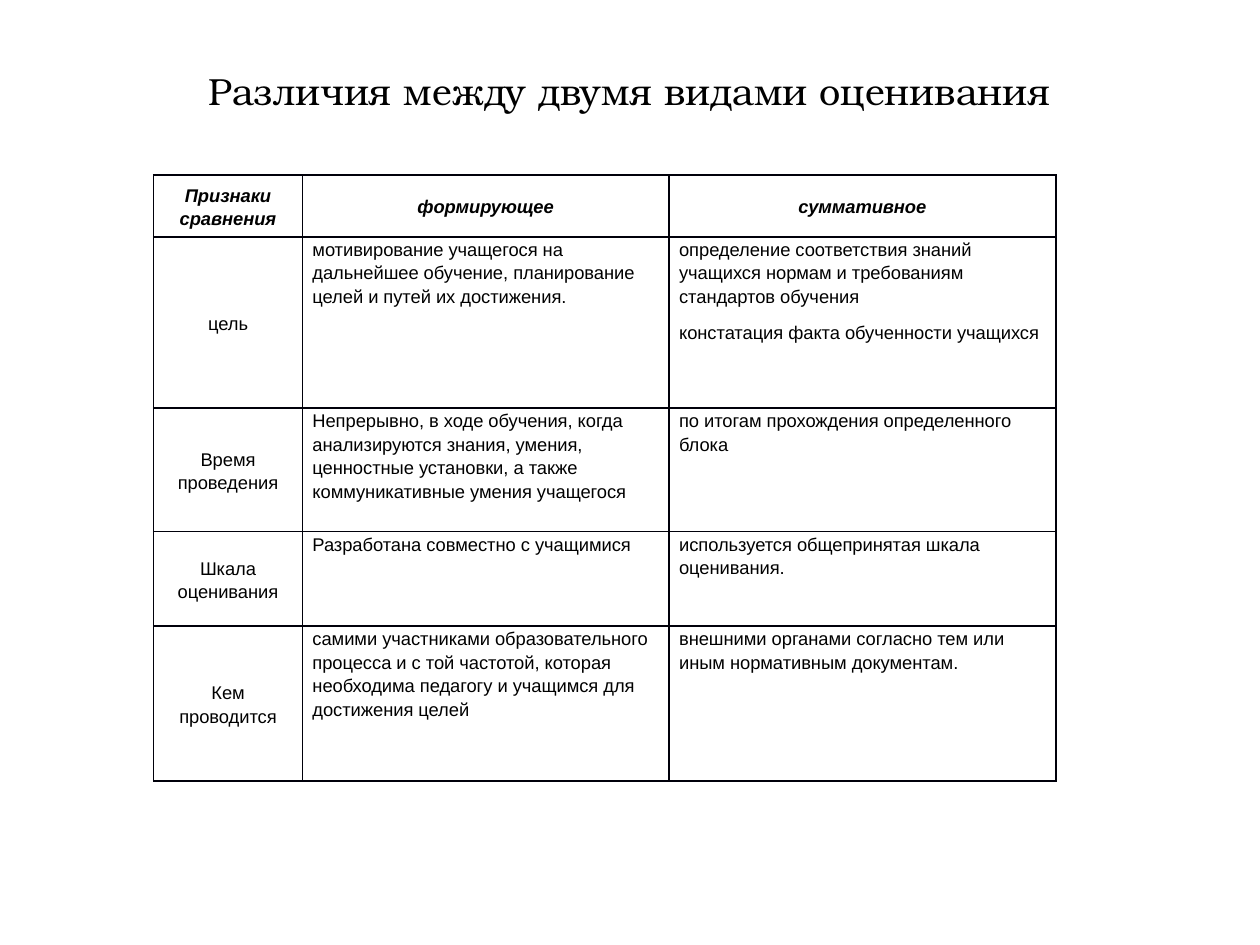
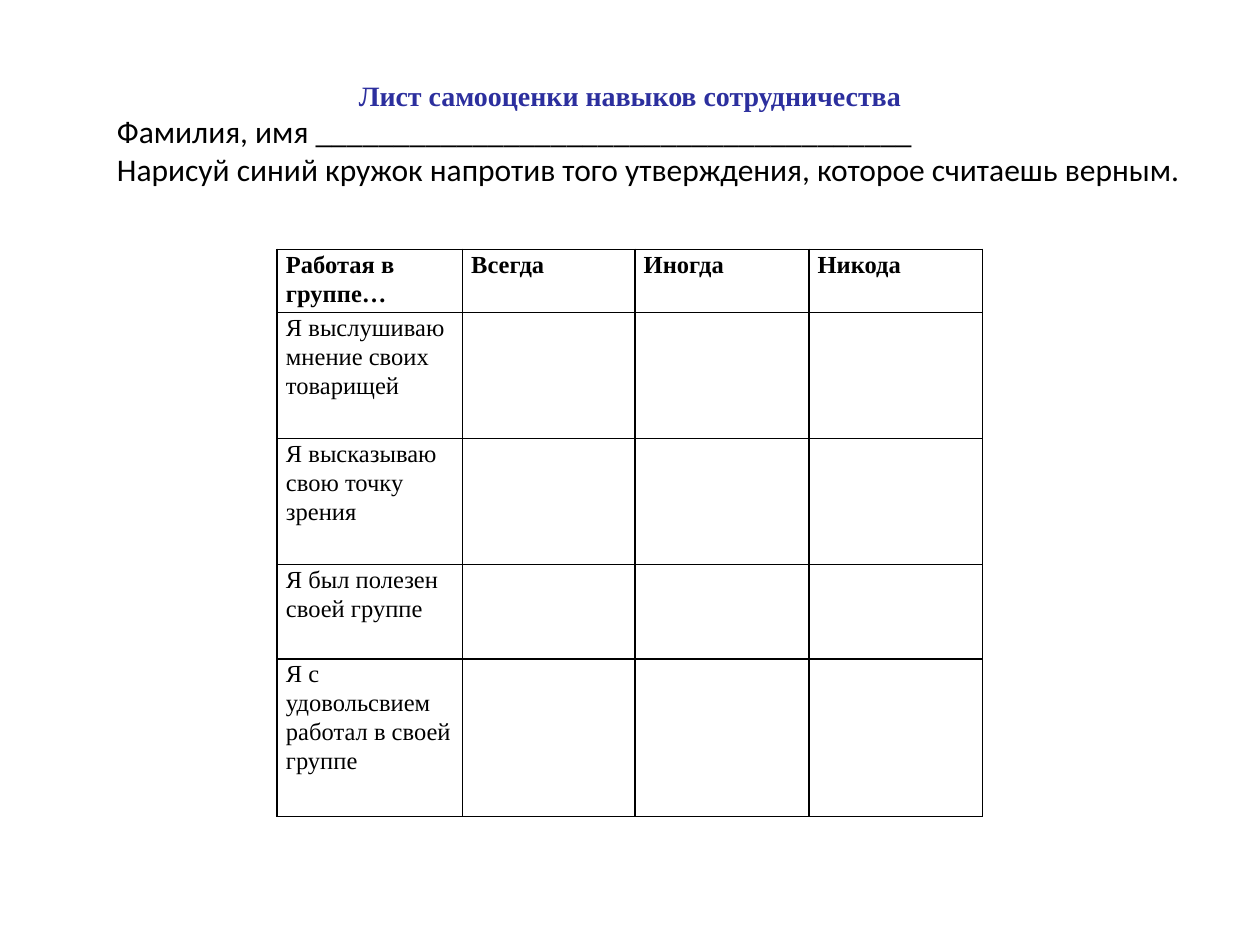
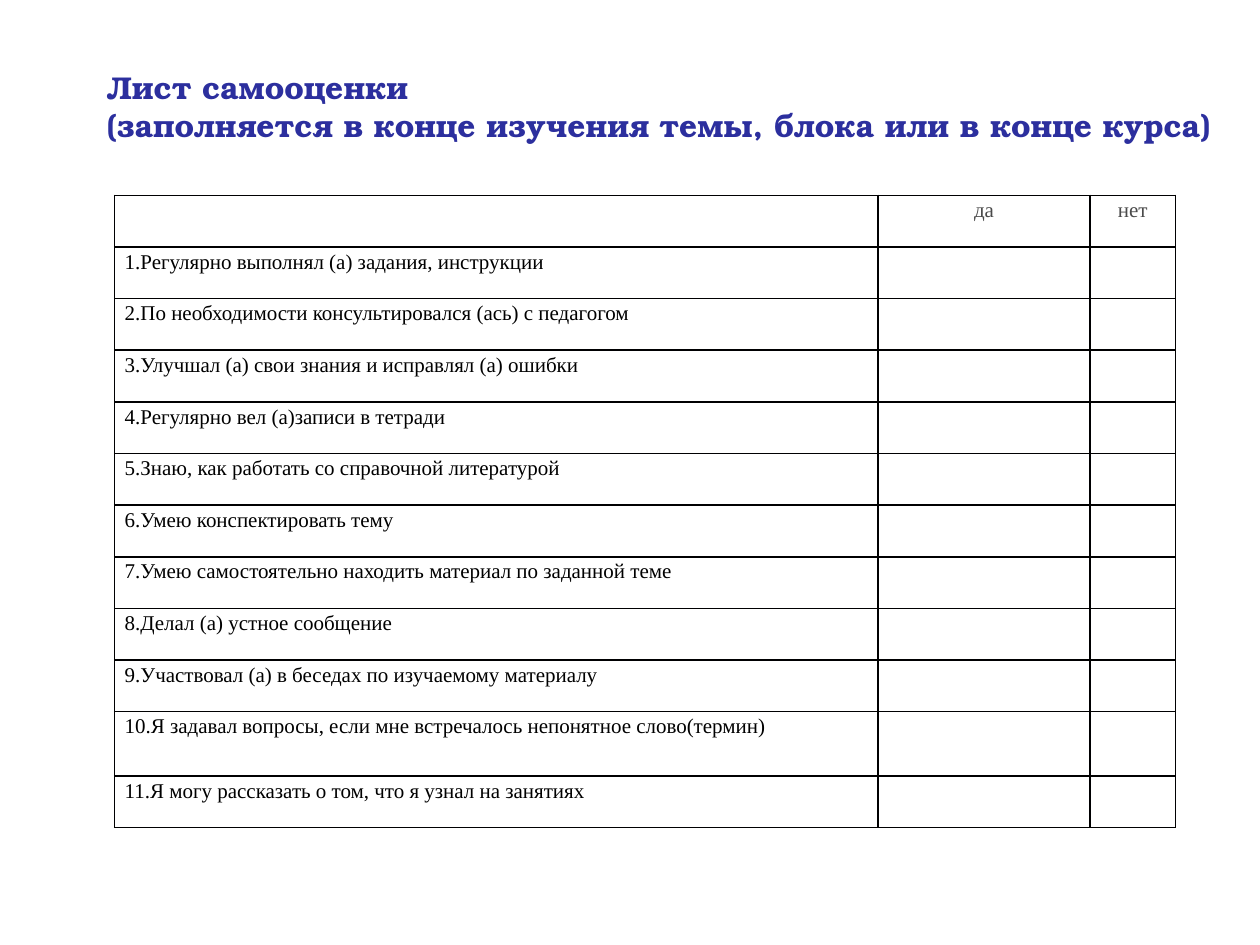
from pptx import Presentation
from pptx.dml.color import RGBColor
from pptx.enum.text import MSO_ANCHOR as ANCHOR, PP_ALIGN as ALIGN
from pptx.oxml import parse_xml
from pptx.oxml.ns import nsdecls
from pptx.util import Inches, Pt

COLORS = {
    "text": "000000",
    "heading": "2C2F9E",
    "answer": "4A4A4A",
    "white": "FFFFFF",
    "compare_line": "00000A",
    "skills_line": "000000",
    "topic_line": "000001",
}
SERIF, SANS, TITLE, BODY = "Times New Roman", "Arial", "TeX Gyre Bonum", "Calibri"


def write(tf, lines, font, size, color="text", bold=False, italic=False,
          align=ALIGN.LEFT, spacing=1.0, after=0, anchor=ANCHOR.TOP):
    """Fill a text frame with one paragraph per line."""
    tf.word_wrap = True
    tf.vertical_anchor = anchor
    for i, line in enumerate(lines):
        p = tf.paragraphs[0] if i == 0 else tf.add_paragraph()
        p.alignment, p.line_spacing, p.space_after = align, spacing, Pt(after)
        r = p.add_run()
        r.text = line
        r.font.name, r.font.size = font, Pt(size)
        r.font.bold, r.font.italic = bold, italic
        r.font.color.rgb = RGBColor.from_string(COLORS[color])


def add_grid(s, left, top, widths, heights, line, inset, fill=None):
    """Add a bordered table with the given column widths and row heights."""
    table = s.shapes.add_table(
        len(heights), len(widths), Inches(left), Inches(top),
        Inches(sum(widths)), Inches(sum(heights))).table
    table.first_row = table.horz_banding = False
    for column, width in zip(table.columns, widths):
        column.width = Inches(width)
    for row, height in zip(table.rows, heights):
        row.height = Inches(height)
    for cell in table.iter_cells():
        cell.margin_left = cell.margin_right = Inches(inset)
        cell.margin_top = cell.margin_bottom = 0
        tcPr = cell._tc.get_or_add_tcPr()
        for side in "LRTB":
            tcPr.append(parse_xml(
                f'<a:ln{side} {nsdecls("a")} w="{Pt(1)}"><a:solidFill>'
                f'<a:srgbClr val="{COLORS[line]}"/></a:solidFill></a:ln{side}>'))
        if fill:
            cell.fill.solid()
            cell.fill.fore_color.rgb = RGBColor.from_string(COLORS[fill])
        else:
            cell.fill.background()
    return table


prs = Presentation()
prs.slide_width, prs.slide_height = Inches(10), Inches(7.5)
blank = prs.slide_layouts[6]

# Slide 1: two kinds of assessment compared
s = prs.slides.add_slide(blank)
title = s.shapes.add_textbox(Inches(0.75), Inches(0.44), Inches(8.5), Inches(0.55))
write(title.text_frame, ["Различия между двумя видами оценивания"], TITLE, 21.6,
      align=ALIGN.CENTER, anchor=ANCHOR.MIDDLE)

comparison = [
    [["Признаки сравнения"], ["формирующее"], ["суммативное"]],
    [["цель"],
     ["мотивирование учащегося на дальнейшее обучение, планирование целей и путей их достижения."],
     ["определение соответствия знаний учащихся нормам и требованиям стандартов обучения",
      "констатация факта обученности учащихся"]],
    [["Время проведения"],
     ["Непрерывно, в ходе обучения, когда анализируются знания, умения, ценностные установки, "
      "а также коммуникативные умения учащегося"],
     ["по итогам прохождения определенного блока"]],
    [["Шкала оценивания"],
     ["Разработана совместно с учащимися"],
     ["используется общепринятая шкала оценивания."]],
    [["Кем проводится"],
     ["самими участниками образовательного процесса и с той частотой, которая необходима "
      "педагогу и учащимся для достижения целей"],
     ["внешними органами согласно тем или иным нормативным документам."]],
]
table = add_grid(s, 1.22, 1.39, [1.18, 2.91, 3.07], [0.49, 1.36, 0.98, 0.75, 1.23],
                 "compare_line", 0.08, "white")
for i, row in enumerate(comparison):
    for j, lines in enumerate(row):
        cell = table.cell(i, j)
        is_label = i == 0 or j == 0
        write(cell.text_frame, lines, SANS, 10.5, bold=i == 0, italic=i == 0,
              align=ALIGN.CENTER if is_label else ALIGN.LEFT, spacing=1.15, after=7.5)
        cell.vertical_anchor = ANCHOR.MIDDLE if is_label else ANCHOR.TOP

# Slide 2: self-assessment of teamwork skills
s = prs.slides.add_slide(blank)
title = s.shapes.add_textbox(Inches(0.75), Inches(0.44), Inches(8.5), Inches(0.63))
write(title.text_frame, ["Лист самооценки навыков сотрудничества"], SERIF, 16, "heading",
      bold=True, align=ALIGN.CENTER, anchor=ANCHOR.MIDDLE)
task = s.shapes.add_textbox(Inches(0.83), Inches(0.84), Inches(8.74), Inches(0.71))
write(task.text_frame,
      ["Фамилия, имя ______________________________________",
       "Нарисуй синий кружок напротив того утверждения, которое считаешь верным."],
      BODY, 18)

table = add_grid(s, 2.2, 1.98, [1.47, 1.37, 1.38, 1.38], [0.5, 1, 1, 0.75, 1.25],
                 "skills_line", 0.07)
for j, heading in enumerate(["Работая в группе…", "Всегда", "Иногда", "Никода"]):
    write(table.cell(0, j).text_frame, [heading], SERIF, 14, bold=True, spacing=1.07)
skills = [
    "Я выслушиваю мнение своих товарищей",
    "Я высказываю свою точку зрения",
    "Я был полезен своей группе",
    "Я с удовольсвием работал в своей группе",
]
for i, skill in enumerate(skills, 1):
    write(table.cell(i, 0).text_frame, [skill], SERIF, 14, spacing=1.07)

# Slide 3: self-assessment at the end of a topic
s = prs.slides.add_slide(blank)
statements = [
    "Регулярно выполнял (а) задания, инструкции",
    "По необходимости консультировался (ась) с педагогом",
    "Улучшал (а) свои знания и исправлял (а) ошибки",
    "Регулярно вел (а)записи в тетради",
    "Знаю, как работать со справочной литературой",
    "Умею конспектировать тему",
    "Умею самостоятельно находить материал по заданной теме",
    "Делал (а) устное сообщение",
    "Участвовал (а) в беседах по изучаемому материалу",
    "Я задавал вопросы, если мне встречалось непонятное слово(термин)",
    "Я могу рассказать о том, что я узнал на занятиях",
]
table = add_grid(s, 0.91, 1.55, [6.06, 1.68, 0.68], [0.41] * 10 + [0.51, 0.41],
                 "topic_line", 0.08, "white")
for j, answer in enumerate(["да", "нет"], 1):
    write(table.cell(0, j).text_frame, [answer], SERIF, 12, "answer",
          align=ALIGN.CENTER, spacing=1.15)
for i, statement in enumerate(statements, 1):
    write(table.cell(i, 0).text_frame, [f"{i}.{statement}"], SERIF, 12, spacing=1.15)

title = s.shapes.add_textbox(Inches(0.75), Inches(0.49), Inches(9.2), Inches(1.01))
write(title.text_frame,
      ["Лист самооценки", "(заполняется в конце изучения темы, блока или в конце курса)"],
      TITLE, 18, "heading", bold=True)

prs.save("out.pptx")
